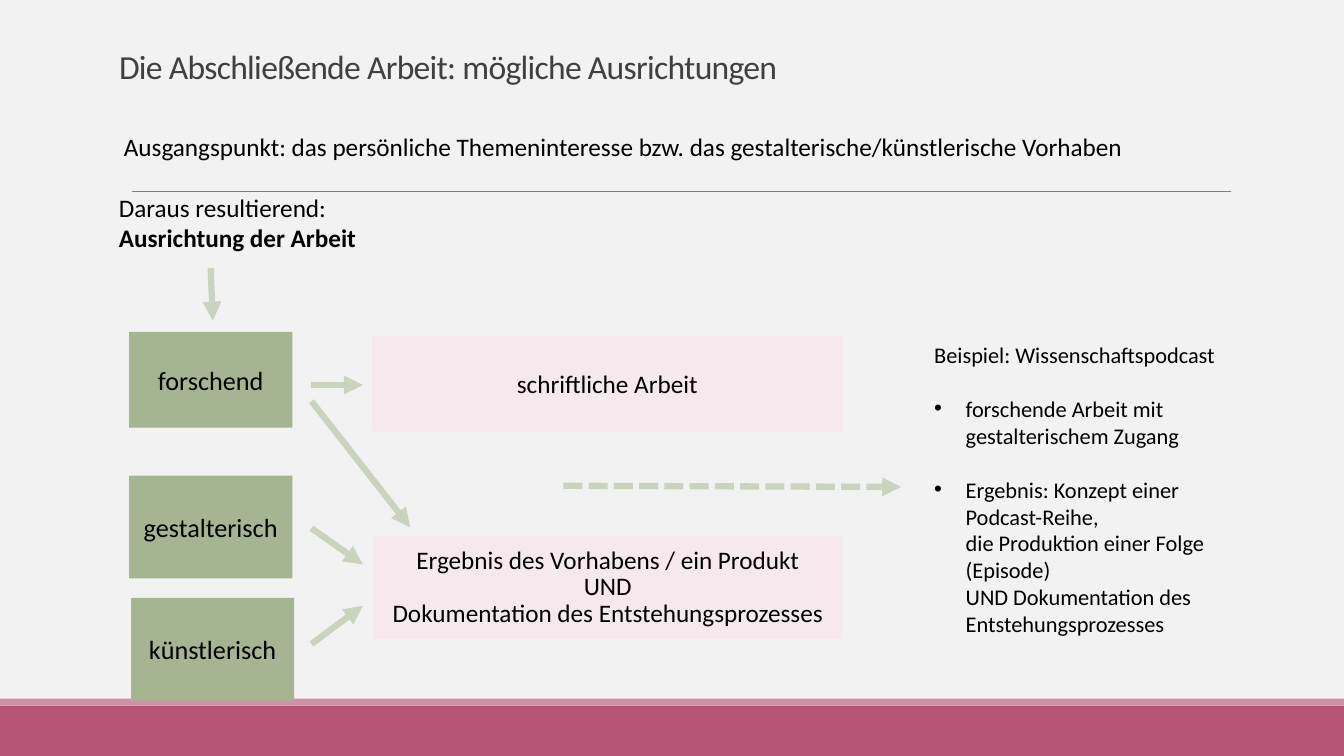
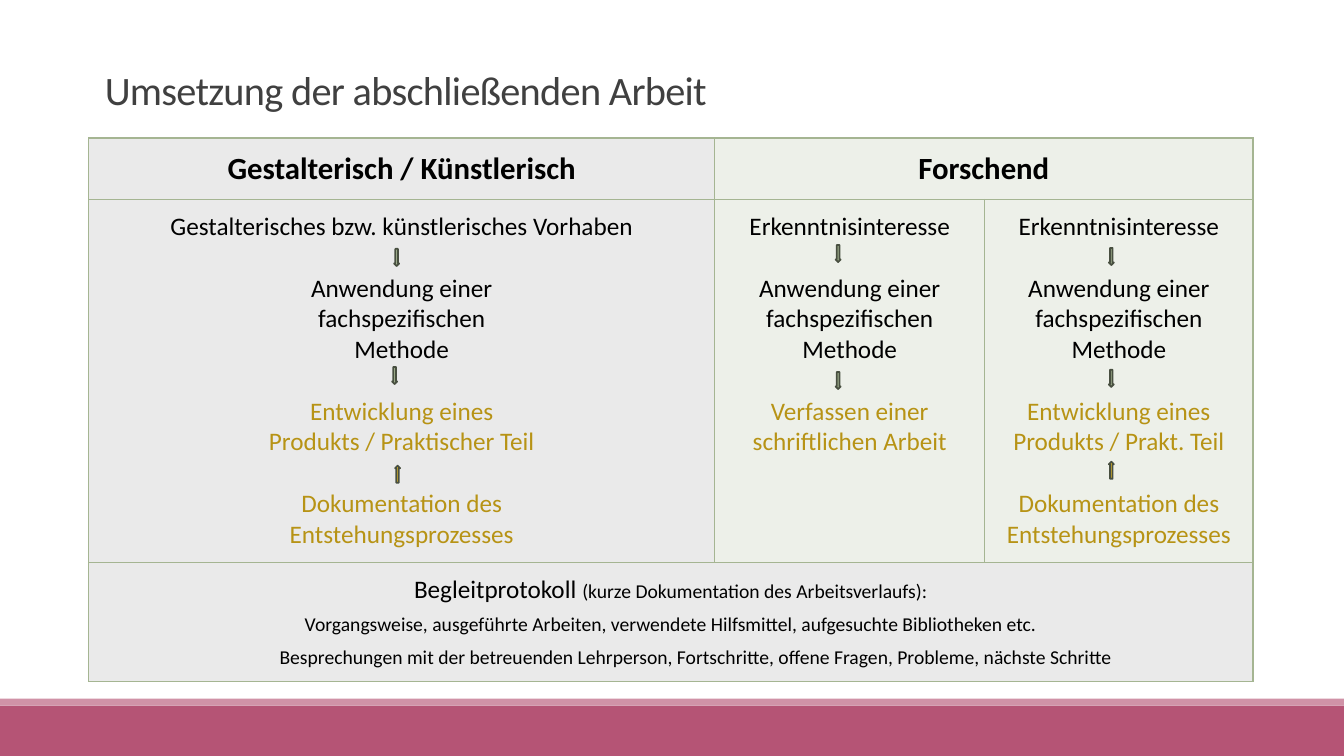
from dataclasses import dataclass

import pptx
import pptx.chart.data
import pptx.dml.color
import pptx.enum.dml
import pptx.enum.shapes
import pptx.enum.text
import pptx.oxml
import pptx.oxml.ns
import pptx.util
from lxml import etree

Pt = pptx.util.Pt
qn = pptx.oxml.ns.qn
Shapes = pptx.enum.shapes.MSO_SHAPE
Align = pptx.enum.text.PP_ALIGN
Anchor = pptx.enum.text.MSO_ANCHOR


@dataclass(frozen=True)
class Theme:
    font: str = "Calibri"
    black: str = "000000"
    title: str = "404040"
    gray: str = "F2F2F2"
    white: str = "FFFFFF"
    band: str = "B55475"
    stripe: str = "D092A7"
    rule: str = "808080"
    green: str = "A5B592"
    pale_green: str = "C9D3BE"
    pink: str = "F6E9ED"
    gold: str = "B79315"
    yellow: str = "E7BC29"
    outline: str = "484F40"
    cell_gray: str = "EAEAEA"
    cell_green: str = "EDF0E9"
    heading: float = 22
    body: float = 18
    label: float = 18.7
    example: float = 16
    note: float = 14


THEME = Theme()
BLANK_LINE = 22


def line(*spans, **options):
    return {"spans": spans, **options}


def centred(*spans, **options):
    return line(*spans, alignment=Align.CENTER, **options)


def step(*texts, **options):
    return [centred(text, space_before=Pt(0 if index else BLANK_LINE), **options)
            for index, text in enumerate(texts)]


DIRECTIONS = {
    "title": ("Die Abschließende Arbeit: mögliche Ausrichtungen", 24, (77.8, 29.5, 828, 36)),
    "texts": [
        ((81.4, 90, 784, 29), THEME.body, [line(
            "Ausgangspunkt: das persönliche Themeninteresse bzw. das gestalterische/künstlerische Vorhaben")]),
        ((77.8, 134, 349, 51), THEME.body, [
            line("Daraus resultierend:"), line("Ausrichtung der Arbeit", bold=True)]),
        ((660.2, 239.8, 222.5, 220.3), THEME.example, [
            line("Beispiel: Wissenschaftspodcast", space_after=Pt(19.5)),
            line("forschende Arbeit mit gestalterischem Zugang", space_after=Pt(19.5), margin=22.5, bullet=True),
            line("Ergebnis: Konzept einer Podcast-Reihe,", margin=22.5, bullet=True),
            line("die Produktion einer Folge (Episode)", margin=22.5),
            line("UND Dokumentation des Entstehungsprozesses", margin=22.5)]),
    ],
    "boxes": [
        ((92.2, 237, 116.6, 68.5), THEME.green, THEME.label, ["forschend"], {}),
        ((92.2, 339.8, 116.6, 73.4), THEME.green, THEME.label, ["gestalterisch"], {}),
        ((93.6, 427, 116.6, 73.4), THEME.green, THEME.label, ["künstlerisch"], {}),
        ((265.7, 239.8, 336.2, 68.5), THEME.pink, THEME.body, ["schriftliche Arbeit"], {}),
        ((267.1, 383, 334.1, 73.4), THEME.pink, THEME.body,
         ["Ergebnis des Vorhabens / ein Produkt", "UND", "Dokumentation des Entstehungsprozesses"],
         {"line_spacing": Pt(19)}),
    ],
    "arrows": [
        ((150.5, 191.5), (152, 229), False),
        ((222.5, 275), (259.2, 275), False),
        ((222.5, 286.6), (293, 376.6), False),
        ((222.5, 377.3), (259.2, 403.2), False),
        ((222.5, 460), (259.2, 432.7), False),
        ((402.5, 347), (643.7, 347.8), True),
    ],
}

IMPLEMENTATION = {
    "title": ("Umsetzung der abschließenden Arbeit", 28.8, (67.7, 48.2, 828, 36.7)),
    "place": (63.4, 98.6),
    "columns": [447.1, 193, 191.5],
    "rows": [43.2, 253.4, 83.5],
    "merges": [((0, 1), (0, 2)), ((2, 0), (2, 2))],
    "cells": {
        (0, 0): [centred("Gestalterisch / Künstlerisch", size=THEME.heading, bold=True)],
        (0, 1): [centred("Forschend", size=THEME.heading, bold=True)],
        (1, 0): [
            centred("Gestalterisches bzw. künstlerisches Vorhaben"),
            *step("Anwendung einer", "fachspezifischen", "Methode"),
            *step("Entwicklung eines", "Produkts / Praktischer Teil", color=THEME.gold),
            *step("Dokumentation des", "Entstehungsprozesses", color=THEME.gold)],
        (1, 1): [
            centred("Erkenntnisinteresse"),
            *step("Anwendung einer fachspezifischen Methode"),
            *step("Verfassen einer schriftlichen Arbeit", color=THEME.gold)],
        (1, 2): [
            centred("Erkenntnisinteresse"),
            *step("Anwendung einer fachspezifischen Methode"),
            *step("Entwicklung eines Produkts / Prakt. Teil", color=THEME.gold),
            *step("Dokumentation des Entstehungsprozesses", color=THEME.gold)],
        (2, 0): [
            centred("Begleitprotokoll ", ("(kurze Dokumentation des Arbeitsverlaufs):", THEME.note),
                    space_after=Pt(6)),
            centred("Vorgangsweise, ausgeführte Arbeiten, verwendete Hilfsmittel, "
                    "aufgesuchte Bibliotheken etc.", size=THEME.note, space_after=Pt(6)),
            centred("Besprechungen mit der betreuenden Lehrperson, Fortschritte, offene Fragen, "
                    "Probleme, nächste Schritte", size=THEME.note, space_after=Pt(6), margin=36)],
    },
    "down": [(281.5, 177.8), (280.1, 262.1), (596.9, 175), (596.9, 265.7), (792, 177.1), (792, 264.2)],
    "up": [(282.2, 332.6), (792, 329.8)],
}


def apply(target, values):
    for name, value in values.items():
        setattr(target, name, value)


def rgb(color):
    return pptx.dml.color.RGBColor.from_string(color)


def paint(fill, color):
    fill.solid()
    fill.fore_color.rgb = rgb(color)


def style(font, size, color=THEME.black, bold=False):
    apply(font, {"name": THEME.font, "size": Pt(size), "bold": bold})
    font.color.rgb = rgb(color)


def write(frame, lines, size):
    for index, entry in enumerate(lines):
        para = frame.add_paragraph() if index else frame.paragraphs[0]
        options = dict(entry)
        spans = options.pop("spans")
        margin = options.pop("margin", 0)
        bullet = options.pop("bullet", False)
        look = {"size": size}
        look.update({key: options.pop(key) for key in ("size", "color", "bold") if key in options})
        apply(para, options)
        for part in spans:
            text, span_size = part if isinstance(part, tuple) else (part, look["size"])
            span = para.add_run()
            span.text = text
            style(span.font, **{**look, "size": span_size})
        if margin:
            properties = para._p.get_or_add_pPr()
            properties.set("marL", str(Pt(margin)))
            properties.set("indent", str(Pt(-margin if bullet else 0)))
            if bullet:
                etree.SubElement(properties, qn("a:buFont"), typeface="Arial")
                etree.SubElement(properties, qn("a:buChar"), char="•")


def add_box(page, place, color, kind=Shapes.RECTANGLE):
    box = page.shapes.add_shape(kind, *map(Pt, place))
    box.shadow.inherit = False
    paint(box.fill, color)
    box.line.fill.background()
    return box


def add_line(page, start, end, color, width):
    connector = page.shapes.add_connector(
        pptx.enum.shapes.MSO_CONNECTOR.STRAIGHT, *map(Pt, (*start, *end)))
    connector.line.color.rgb = rgb(color)
    connector.line.width = Pt(width)
    etree.SubElement(connector.element.spPr, qn("a:effectLst"))
    return connector


def add_page(deck, layout, title, background):
    page = deck.slides.add_slide(layout)
    paint(page.background.fill, background)
    text, size, place = title
    box = page.shapes.title
    apply(box, dict(zip(("left", "top", "width", "height"), map(Pt, place))))
    apply(box.text_frame, {"word_wrap": True, "vertical_anchor": Anchor.BOTTOM,
                           "auto_size": pptx.enum.text.MSO_AUTO_SIZE.NONE})
    write(box.text_frame, [line(text, color=THEME.title, alignment=Align.LEFT, line_spacing=0.85)], size)
    for properties in box.element.iter(qn("a:rPr")):
        properties.set("spc", "-50")
    return page


def decorate(layout, page):
    for holder in list(layout.placeholders):
        if holder.placeholder_format.type != pptx.enum.shapes.PP_PLACEHOLDER.TITLE:
            layout.shapes.element.remove(holder.element)
    parts = [add_box(page, (0, 504, 960, 36), THEME.band),
             add_box(page, (0, 499, 960, 5), THEME.stripe),
             add_line(page, (94.3, 136.6), (879.1, 136.6), THEME.rule, 0.5)]
    for part in parts:
        layout.shapes.element.append(part.element)


def fill_directions(page, content):
    for place, color, size, texts, options in content["boxes"]:
        box = add_box(page, place, color)
        apply(box.text_frame, {"word_wrap": True, "vertical_anchor": Anchor.MIDDLE})
        write(box.text_frame, [centred(text, **options) for text in texts], size)
    for place, size, lines in content["texts"]:
        box = page.shapes.add_textbox(*map(Pt, place))
        box.text_frame.word_wrap = True
        write(box.text_frame, lines, size)
    for start, end, dotted in content["arrows"]:
        arrow = add_line(page, start, end, THEME.pale_green, 4.5)
        if dotted:
            arrow.line.dash_style = pptx.enum.dml.MSO_LINE.SQUARE_DOT
        etree.SubElement(arrow.line._get_or_add_ln(), qn("a:tailEnd"), type="triangle")


def add_borders(cell):
    properties = cell._tc.get_or_add_tcPr()
    for index, side in enumerate(("lnL", "lnR", "lnT", "lnB")):
        border = etree.Element(qn("a:" + side), w=str(Pt(1)))
        solid = etree.SubElement(border, qn("a:solidFill"))
        etree.SubElement(solid, qn("a:srgbClr"), val=THEME.green)
        properties.insert(index, border)


def fill_implementation(page, content):
    widths, heights = content["columns"], content["rows"]
    table = page.shapes.add_table(len(heights), len(widths), *map(
        Pt, (*content["place"], sum(widths), sum(heights)))).table
    apply(table, {"first_row": False, "horz_banding": False})
    for column, width in zip(table.columns, widths):
        column.width = Pt(width)
    for row, height in zip(table.rows, heights):
        row.height = Pt(height)
    for first, last in content["merges"]:
        table.cell(*first).merge(table.cell(*last))
    for row in range(len(heights)):
        for column in range(len(widths)):
            cell = table.cell(row, column)
            apply(cell, {"margin_left": Pt(7.2), "margin_right": Pt(7.2),
                         "margin_top": Pt(8.6), "margin_bottom": Pt(8.6)})
            paint(cell.fill, THEME.cell_green if column and row < 2 else THEME.cell_gray)
            add_borders(cell)
            if (row, column) in content["cells"]:
                write(cell.text_frame, content["cells"][row, column], THEME.body)
    for key, color, rotation in (("down", THEME.green, 0), ("up", THEME.yellow, 180)):
        for left, top in content[key]:
            arrow = add_box(page, (left, top, 3.6, 12.2), color, Shapes.DOWN_ARROW)
            arrow.rotation = rotation
            arrow.line.color.rgb = rgb(THEME.outline)
            arrow.line.width = Pt(1.25)


def main():
    deck = pptx.Presentation()
    apply(deck, {"slide_width": Pt(960), "slide_height": Pt(540)})
    layout = deck.slide_layouts[5]
    directions = add_page(deck, layout, DIRECTIONS["title"], THEME.gray)
    decorate(layout, directions)
    fill_directions(directions, DIRECTIONS)
    implementation = add_page(deck, layout, IMPLEMENTATION["title"], THEME.white)
    fill_implementation(implementation, IMPLEMENTATION)
    deck.save("out.pptx")


if __name__ == "__main__":
    main()
